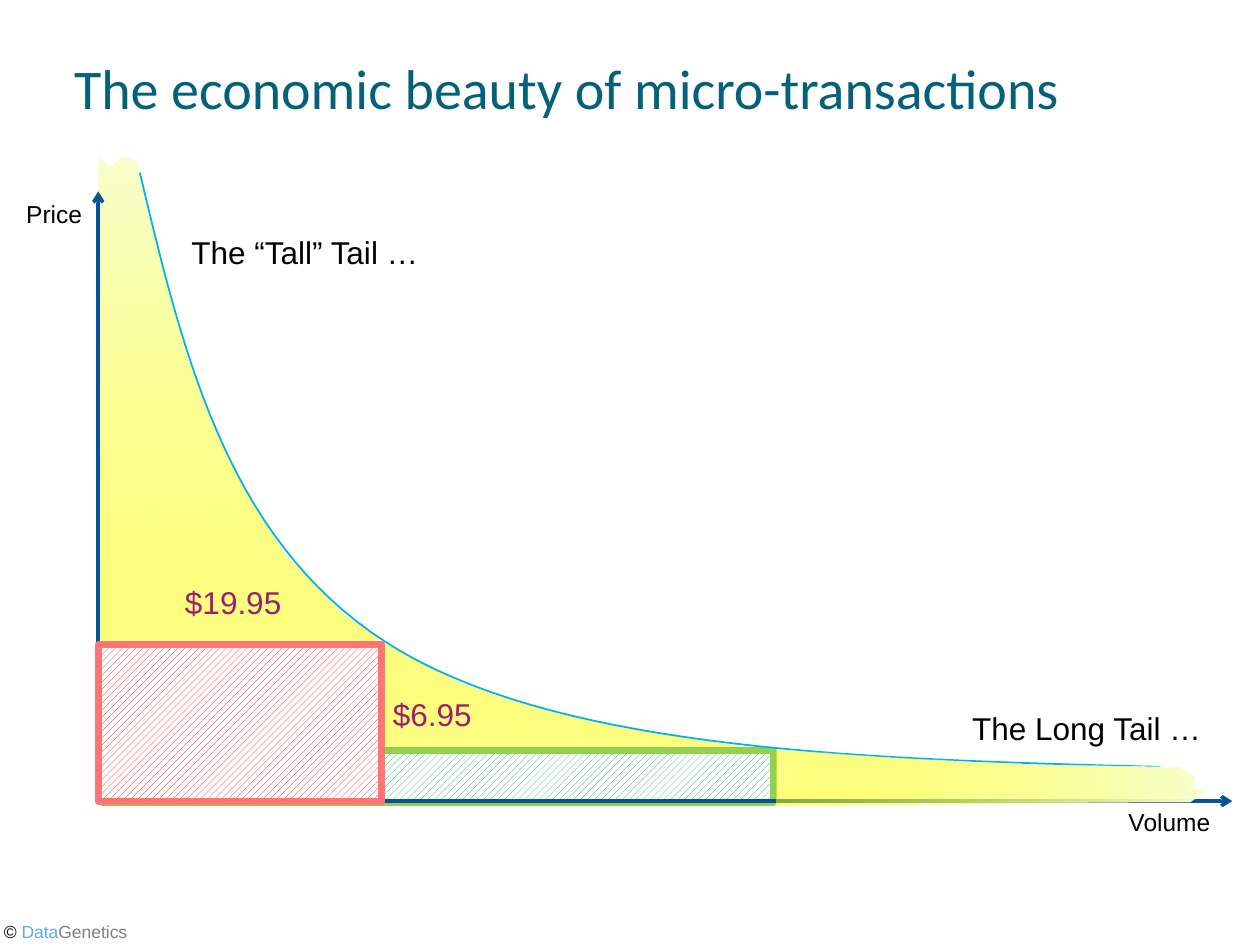
from lxml import etree
from pptx import Presentation
from pptx import util as u
from pptx.dml.color import RGBColor
from pptx.enum import dml, shapes, text
from pptx.oxml.ns import qn

# Plot coordinates are centimetres from the axes' origin: x to the right, y upwards
TALL_AREA = [
    (13.56, 1.02), (0, 1.04), (0, 13), (0.23, 12.78), (0.48, 13), (0.74, 12.93),
    (0.89, 12.57), (1.3, 10.85), (1.78, 8.99), (2.29, 7.72), (2.87, 6.43),
    (3.25, 5.82), (3.76, 5), (4.32, 4.42), (4.9, 3.81), (5.36, 3.53),
    (5.72, 3.23), (6.45, 2.84), (7.29, 2.41), (8.15, 2.11), (9.3, 1.78),
    (10.57, 1.5), (11.86, 1.3), (12.88, 1.14),
]
LONG_AREA = [
    (13.67, 1.04), (13.67, -0.08), (22, 0), (22.28, 0.2), (22.02, 0.3),
    (22.1, 0.48), (21.79, 0.69), (20.4, 0.71), (18.87, 0.74), (17.3, 0.81),
    (15.72, 0.89), (14.4, 0.99),
]
DEMAND_BEZIERS = [
    [(0.84, 12.67), (1.75, 8.84), (2.67, 5.03), (6.1, 3.02)],
    [(6.1, 3.02), (9.53, 1.02), (15.47, 0.84), (21.41, 0.69)],
]


def colour(hex_string):
    return RGBColor.from_string(hex_string)


def add_span(para, words, size, hex_string, font="Arial"):
    span = para.add_run()
    span.text = words
    span.font.size = u.Pt(size)
    span.font.name = font
    span.font.color.rgb = colour(hex_string)


def bezier_points(controls, steps=32):
    weights = (1, 3, 3, 1)
    for step in range(steps + 1):
        t = step / steps
        factors = [w * (1 - t) ** (3 - i) * t ** i for i, w in enumerate(weights)]
        yield tuple(sum(f * point[axis] for f, point in zip(factors, controls))
                    for axis in (0, 1))


class Plot:
    """Places parts relative to the origin of the axes."""

    def __init__(self, page, left, base):
        self.page, self.left, self.base = page, left, base

    def at(self, x, y):
        return u.Cm(self.left + x), u.Cm(self.base - y)

    def outline(self, points, close):
        start, *rest = [self.at(x, y) for x, y in points]
        builder = self.page.shapes.build_freeform(*start)
        builder.add_line_segments(rest, close=close)
        shape = builder.convert_to_shape()
        shape.shadow.inherit = False
        return shape

    def area(self, points, angle):
        shape = self.outline(points, True)
        shape.line.fill.background()
        shape.fill.gradient()
        shape.fill.gradient_angle = angle
        for stop, hex_string, place in zip(shape.fill.gradient_stops,
                                           ("FFFF00", "F8FFCD"), (0, 1)):
            stop.color.rgb = colour(hex_string)
            stop.position = place
        # Half-transparent yellow at the start of the gradient
        first = next(shape._element.iter(qn("a:srgbClr")))
        etree.SubElement(first, qn("a:alpha")).set("val", "50000")

    def curve(self, beziers):
        points = [point for controls in beziers for point in bezier_points(controls)]
        shape = self.outline(points, False)
        shape.fill.background()
        shape.line.color.rgb = colour("00B0F0")
        shape.line.width = u.Pt(1)

    def axis(self, x, y):
        line = self.page.shapes.add_connector(
            shapes.MSO_CONNECTOR.STRAIGHT, *self.at(0, 0), *self.at(x, y))
        line.line.color.rgb = colour("095295")
        line.line.width = u.Pt(2)
        etree.SubElement(line.line._get_or_add_ln(), qn("a:tailEnd")).set("type", "arrow")
        etree.SubElement(line._element.spPr, qn("a:effectLst"))

    def revenue(self, x, y, width, height, hatch, border):
        shape = self.page.shapes.add_shape(
            shapes.MSO_SHAPE.RECTANGLE, *self.at(x, y), u.Cm(width), u.Cm(height))
        shape.shadow.inherit = False
        shape.fill.patterned()
        shape.fill.pattern = dml.MSO_PATTERN.WIDE_UPWARD_DIAGONAL
        shape.fill.fore_color.rgb = colour(hatch)
        shape.fill.back_color.rgb = colour("FFFFFF")
        shape.line.color.rgb = colour(border)
        shape.line.width = u.Pt(4)

    def label(self, words, x, y, width, size=18, hex_string="000000"):
        height = 1.02 if size == 18 else 0.86
        box = self.page.shapes.add_textbox(*self.at(x, y), u.Cm(width), u.Cm(height))
        frame = box.text_frame
        frame.word_wrap = False
        frame.auto_size = text.MSO_AUTO_SIZE.SHAPE_TO_FIT_TEXT
        add_span(frame.paragraphs[0], words, size, hex_string)


def draw_title(page, left, top, width, height):
    title = page.shapes.title
    title.left, title.top = u.Cm(left), u.Cm(top)
    title.width, title.height = u.Cm(width), u.Cm(height)
    title.text_frame.vertical_anchor = text.MSO_ANCHOR.MIDDLE
    para = title.text_frame.paragraphs[0]
    para.alignment = text.PP_ALIGN.CENTER
    add_span(para, "The economic beauty of micro-transactions", 32, "04617B", "Calibri")


def draw_plot(page, left, base):
    plot = Plot(page, left, base)
    price_colour = "9F1D71"
    # Tall tail and the low-price revenue
    plot.area(TALL_AREA, 90)
    plot.revenue(0.08, 1.02, 13.54, 1.04, "00B050", "92D050")
    # Axes
    plot.axis(22.86, 0)
    plot.label("Volume", 20.52, 0, 2.18, 14)
    plot.axis(0, 12.29)
    plot.label("Price", -1.7, 12.27, 1.65, 14)
    # Demand curve and the high-price revenue
    plot.curve(DEMAND_BEZIERS)
    plot.revenue(0, 3.15, 5.72, 3.15, "FF0000", "FF7575")
    plot.label("$19.95", 1.5, 4.52, 2.46, hex_string=price_colour)
    plot.label("$6.95", 5.69, 2.26, 2.11, hex_string=price_colour)
    # Long tail and the names of both tails
    plot.area(LONG_AREA, 0)
    plot.label("The Long Tail …", 17.37, 1.98, 5.16)
    plot.label("The “Tall” Tail …", 1.63, 11.58, 5.13)


def draw_copyright(page, left, top, width, height):
    box = page.shapes.add_textbox(u.Cm(left), u.Cm(top), u.Cm(width), u.Cm(height))
    frame = box.text_frame
    frame.word_wrap = True
    frame.margin_left = u.Cm(0.08)
    para = frame.paragraphs[0]
    for words, hex_string in (("© ", "000000"), ("Data", "59AAF2"),
                              ("Genetics", "808080")):
        add_span(para, words, 10, hex_string)


def main():
    deck = Presentation()
    deck.slide_width, deck.slide_height = u.Cm(25.4), u.Cm(19.05)
    page = deck.slides.add_slide(deck.slide_layouts[5])
    draw_title(page, 0, 0.66, 22.86, 2.18)
    draw_plot(page, 1.98, 16.15)
    draw_copyright(page, 0, 18.44, 3.8, 0.6)
    deck.save("out.pptx")


if __name__ == "__main__":
    main()
